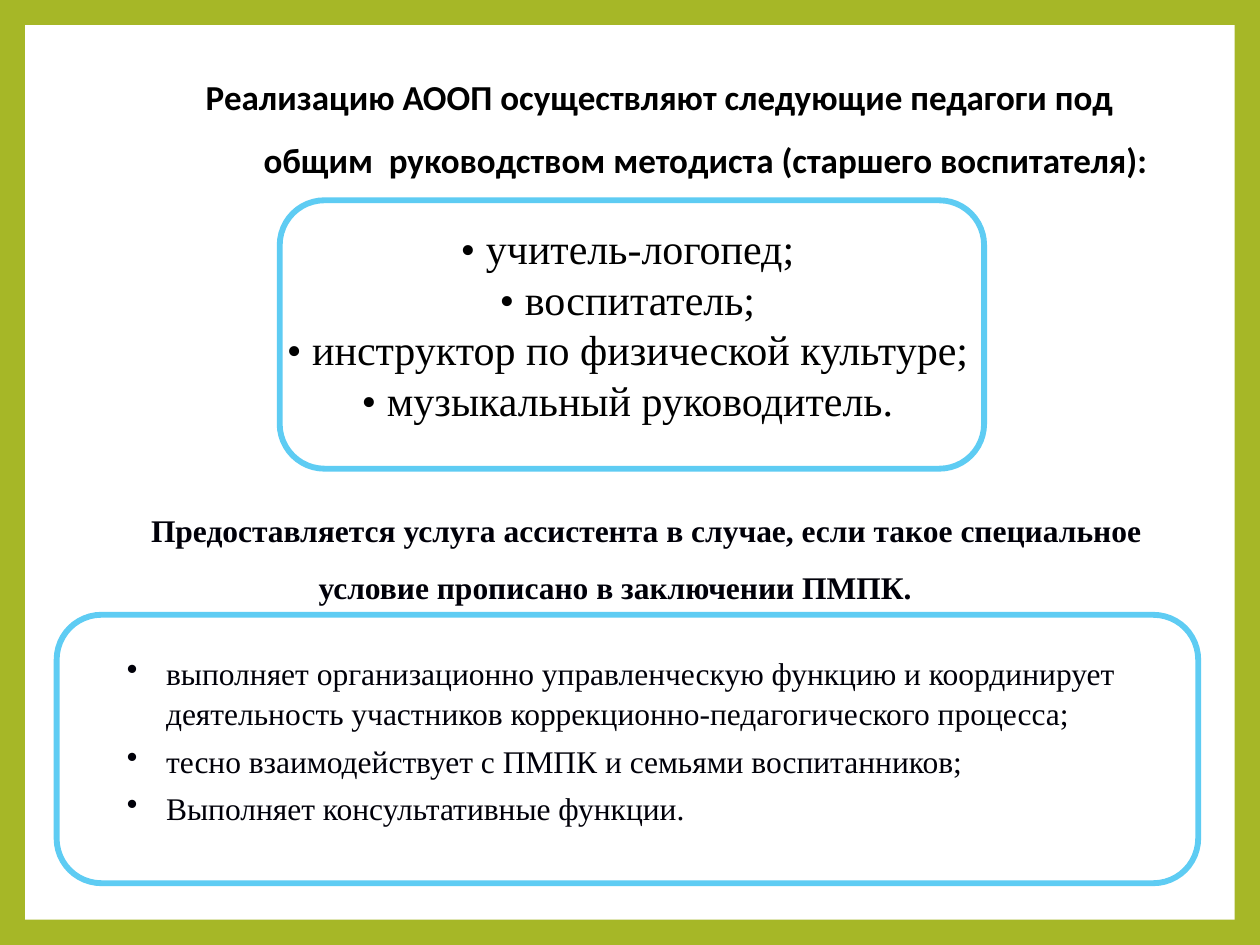
from lxml import etree
from pptx import Presentation
from pptx.dml.color import RGBColor
from pptx.enum import shapes, text
from pptx.oxml.ns import qn
from pptx.util import Inches, Pt

COLORS = {"border": "A6B727", "panel": "FFFFFF", "outline": "5ECCF3",
          "black": "000000", "ink": "000009"}
SERIF = "Times New Roman"

TITLE = ("Реализацию АООП осуществляют следующие педагоги под "
         "общим  руководством методиста (старшего воспитателя):")
TEACHERS = ["• учитель-логопед;", "• воспитатель;",
            "• инструктор по физической культуре;",
            "• музыкальный руководитель."]
ASSISTANT = ("Предоставляется услуга ассистента в случае, если такое специальное "
             "условие прописано в заключении ПМПК.")
DUTIES = ["выполняет организационно управленческую функцию и координирует "
          "деятельность участников коррекционно-педагогического процесса;",
          "тесно взаимодействует с ПМПК и семьями воспитанников;",
          "Выполняет консультативные функции."]

FRAMES = [(2.22, 1.59, 5.59, 2.13), (0.45, 4.88, 9.06, 2.13)]


def rgb(name):
    return RGBColor.from_string(COLORS[name])


def add_panel(s, kind, box, outline=None):
    sp = s.shapes.add_shape(kind, *map(Inches, box))
    sp.shadow.inherit = False
    sp.fill.solid()
    sp.fill.fore_color.rgb = rgb("panel")
    if outline:
        sp.line.color.rgb = rgb(outline)
        sp.line.width = Pt(3.35)
    else:
        sp.line.fill.background()
    return sp


def add_text_box(s, box):
    tf = s.shapes.add_textbox(*map(Inches, box)).text_frame
    tf.word_wrap = True
    return tf


def write(tf, lines, size, color, font=SERIF, bold=False, align=None):
    tf.text = "\n".join(lines)
    for p in tf.paragraphs:
        p.alignment = align
        p.font.name, p.font.size, p.font.bold = font, Pt(size), bold
        p.font.color.rgb = rgb(color)


def indent(p, left, first, bullet=None):
    """Set the left margin and first-line offset in inches, with an optional bullet."""
    pPr = p._p.get_or_add_pPr()
    pPr.set("marL", str(Inches(left)))
    pPr.set("indent", str(Inches(first)))
    if bullet:
        mark = etree.Element(qn("a:buChar"), char=bullet)
        pPr.find(qn("a:defRPr")).addprevious(mark)


prs = Presentation()
prs.slide_width, prs.slide_height = Inches(10), Inches(7.5)
s = prs.slides.add_slide(prs.slide_layouts[5])
s.background.fill.solid()
s.background.fill.fore_color.rgb = rgb("border")

page = add_panel(s, shapes.MSO_SHAPE.RECTANGLE, (0.2, 0.2, 9.6, 7.1))
title = s.shapes.title
title._element.addprevious(page._element)
title.left, title.top, title.width, title.height = map(Inches, (0.81, 0.42, 8.42, 1.02))
tf = title.text_frame
tf.margin_left = tf.margin_right = tf.margin_bottom = 0
tf.margin_top = Inches(0.01)
tf.vertical_anchor = text.MSO_ANCHOR.MIDDLE
write(tf, [TITLE], 20, "black", "Calibri", True, text.PP_ALIGN.CENTER)
tf.paragraphs[0].line_spacing = 1.5
indent(tf.paragraphs[0], 1.16, -0.73)

for frame in FRAMES:
    add_panel(s, shapes.MSO_SHAPE.ROUNDED_RECTANGLE, frame, "outline")

tf = add_text_box(s, (1.87, 1.72, 6.22, 1.72))
write(tf, TEACHERS, 24, "black", align=text.PP_ALIGN.CENTER)

tf = add_text_box(s, (0.61, 3.86, 9.21, 1.01))
write(tf, [ASSISTANT], 18, "ink", bold=True)
tf.paragraphs[0].line_spacing = 1.5
indent(tf.paragraphs[0], 1.82, -1.33)

tf = add_text_box(s, (0.91, 5.12, 8.6, 2.11))
write(tf, DUTIES, 18, "ink")
for i, p in enumerate(tf.paragraphs):
    p.line_spacing = Pt(9) if i else 1.07
    p.space_before = Pt(18 if i else 0)
    indent(p, 0.31, -0.31, "•")

prs.save("out.pptx")
